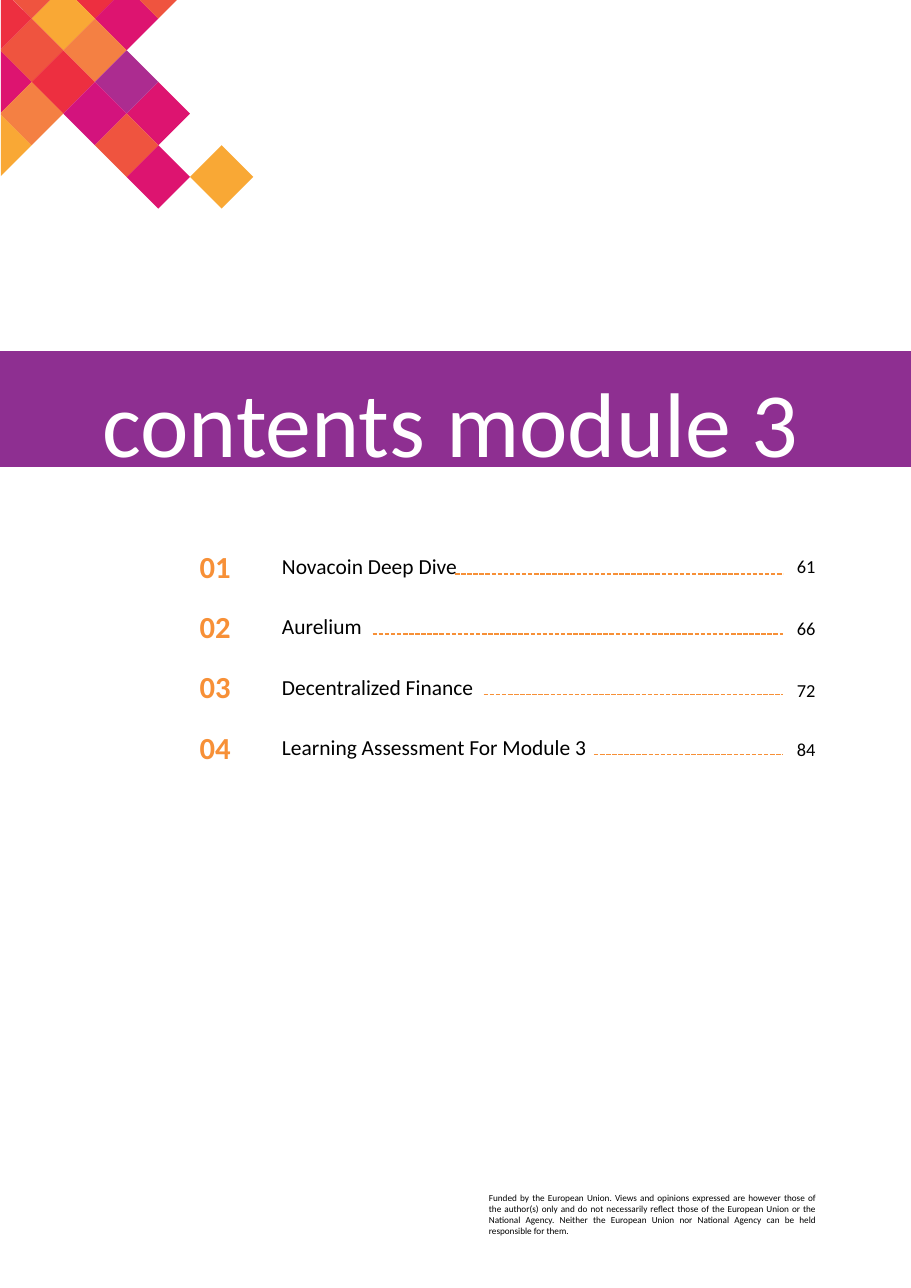
from dataclasses import dataclass

from lxml import etree
from pptx import Presentation
from pptx.dml.color import RGBColor
from pptx.enum.dml import MSO_LINE
from pptx.enum.shapes import MSO_CONNECTOR, MSO_SHAPE
from pptx.enum.text import MSO_ANCHOR, PP_ALIGN
from pptx.oxml.ns import qn
from pptx.slide import Slide
from pptx.util import Cm, Pt

LEFT, CENTER, RIGHT, JUSTIFY = PP_ALIGN.LEFT, PP_ALIGN.CENTER, PP_ALIGN.RIGHT, PP_ALIGN.JUSTIFY
TOP, MIDDLE = MSO_ANCHOR.TOP, MSO_ANCHOR.MIDDLE
STRAIGHT, RECTANGLE, DASH = MSO_CONNECTOR.STRAIGHT, MSO_SHAPE.RECTANGLE, MSO_LINE.SQUARE_DOT

BLACK = RGBColor(0x00, 0x00, 0x00)
WHITE = RGBColor(0xFF, 0xFF, 0xFF)
PURPLE = RGBColor(0x8E, 0x2F, 0x91)
ORANGE = RGBColor(0xF7, 0x90, 0x37)
RED = RGBColor(0xED, 0x2F, 0x40)
PINK = RGBColor(0xDD, 0x14, 0x70)
CORAL = RGBColor(0xEF, 0x54, 0x3F)
AMBER = RGBColor(0xF9, 0xA8, 0x35)
APRICOT = RGBColor(0xF4, 0x80, 0x43)
VIOLET = RGBColor(0xAC, 0x2C, 0x90)
MAGENTA = RGBColor(0xD3, 0x13, 0x7D)

FONT = "Calibri"
PAGE_WIDTH, PAGE_HEIGHT = 21.0, 29.7

# Mosaic: tile centres lie on a grid whose step is half a tile diagonal
TILE_STEP = 0.73
MOSAIC_TOP = 0.43
MOSAIC_LIMITS = (0.02, -0.1)

# Contents list
FIRST_ROW_TOP, ROW_PITCH, ROW_HEIGHT = 12.57, 1.39, 0.97
LEADER_DROP, LEADER_END = 0.66, 18.05

Point = tuple[float, float]


@dataclass(frozen=True)
class Tile:
    column: int
    row: int
    color: RGBColor


@dataclass(frozen=True)
class Entry:
    number: str
    title: str
    page: str
    leader_start: float
    page_drop: float


@dataclass(frozen=True)
class Style:
    size: float
    color: RGBColor = BLACK
    bold: bool = False
    align: PP_ALIGN = LEFT
    anchor: MSO_ANCHOR = MIDDLE


TILES = (
    Tile(3, -1, RED), Tile(4, 0, PINK), Tile(5, -1, CORAL), Tile(2, 0, AMBER),
    Tile(1, 1, CORAL), Tile(2, 2, RED), Tile(3, 1, APRICOT), Tile(0, 2, PINK),
    Tile(0, 4, AMBER), Tile(1, 3, APRICOT), Tile(7, 5, AMBER), Tile(5, 5, PINK),
    Tile(5, 3, PINK), Tile(4, 2, VIOLET), Tile(3, 3, MAGENTA), Tile(4, 4, CORAL),
    Tile(1, -1, CORAL), Tile(0, 0, RED),
)
ENTRIES = (
    Entry("01", "Novacoin Deep Dive", "61", 10.49, 0),
    Entry("02", "Aurelium", "66", 8.59, 0.05),
    Entry("03", "Decentralized Finance", "72", 11.15, 0.08),
    Entry("04", "Learning Assessment For Module 3", "84", 13.69, 0.05),
)
FUNDING_NOTE = (
    "Funded by the European Union. Views and opinions expressed are however those of "
    "the author(s) only and do not necessarily reflect those of the European Union or the "
    "National Agency. Neither the European Union nor National Agency can be held "
    "responsible for them."
)

HEADING = Style(60, WHITE, anchor=TOP)
NUMBER = Style(20, ORANGE, bold=True, align=CENTER)
TITLE = Style(14)
PAGE_NUMBER = Style(12, align=RIGHT)
NOTE = Style(6, align=JUSTIFY, anchor=TOP)


def clip(points: list[Point], axis: int, limit: float) -> list[Point]:
    """Cut a polygon to the side where the given coordinate is at least the limit."""
    kept = []
    for start, end in zip(points, points[1:] + points[:1]):
        if start[axis] >= limit:
            kept.append(start)
        if (start[axis] >= limit) != (end[axis] >= limit):
            share = (limit - start[axis]) / (end[axis] - start[axis])
            kept.append((start[0] + share * (end[0] - start[0]),
                         start[1] + share * (end[1] - start[1])))
    return kept


def paint(shape, color: RGBColor) -> None:
    shape.shadow.inherit = False
    shape.fill.solid()
    shape.fill.fore_color.rgb = color
    shape.line.fill.background()


def draw_tile(page: Slide, tile: Tile) -> None:
    x = tile.column * TILE_STEP
    y = MOSAIC_TOP + tile.row * TILE_STEP
    points = [(x, y - TILE_STEP), (x + TILE_STEP, y), (x, y + TILE_STEP), (x - TILE_STEP, y)]
    for axis, limit in enumerate(MOSAIC_LIMITS):
        points = clip(points, axis, limit)
    corners = [(Cm(px), Cm(py)) for px, py in points]
    builder = page.shapes.build_freeform(*corners[0])
    builder.add_line_segments(corners[1:], close=True)
    paint(builder.convert_to_shape(), tile.color)


def draw_text(page: Slide, text: str, left: float, top: float, width: float,
              height: float, style: Style) -> None:
    box = page.shapes.add_textbox(Cm(left), Cm(top), Cm(width), Cm(height))
    frame = box.text_frame
    frame.word_wrap = True
    frame.vertical_anchor = style.anchor
    frame.text = text
    para = frame.paragraphs[0]
    para.alignment = style.align
    font = para.runs[0].font
    font.name, font.size, font.bold = FONT, Pt(style.size), style.bold
    font.color.rgb = style.color


def draw_leader(page: Slide, start: float, y: float) -> None:
    leader = page.shapes.add_connector(STRAIGHT, Cm(start), Cm(y), Cm(LEADER_END), Cm(y))
    leader.line.color.rgb = ORANGE
    leader.line.width = Pt(1)
    leader.line.dash_style = DASH
    etree.SubElement(leader._element.spPr, qn("a:effectLst"))


def draw_entry(page: Slide, entry: Entry, top: float) -> None:
    draw_text(page, entry.number, 4.06, top, 1.8, ROW_HEIGHT, NUMBER)
    draw_text(page, entry.title, 6.25, top, 9.86, ROW_HEIGHT, TITLE)
    draw_text(page, entry.page, 17.78, top + entry.page_drop, 1.27, ROW_HEIGHT, PAGE_NUMBER)
    draw_leader(page, entry.leader_start, top + LEADER_DROP)


def main() -> None:
    deck = Presentation()
    deck.slide_width, deck.slide_height = Cm(PAGE_WIDTH), Cm(PAGE_HEIGHT)
    page = deck.slides.add_slide(deck.slide_layouts[6])

    band = page.shapes.add_shape(RECTANGLE, 0, Cm(8.1), Cm(PAGE_WIDTH), Cm(2.67))
    paint(band, PURPLE)
    for tile in TILES:
        draw_tile(page, tile)
    draw_text(page, "contents module 3", 2.11, 8.31, 17.78, 2.69, HEADING)
    for index, entry in enumerate(ENTRIES):
        draw_entry(page, entry, FIRST_ROW_TOP + index * ROW_PITCH)
    draw_text(page, FUNDING_NOTE, 11.02, 27.36, 8.03, 1.27, NOTE)

    deck.save("out.pptx")


if __name__ == "__main__":
    main()
